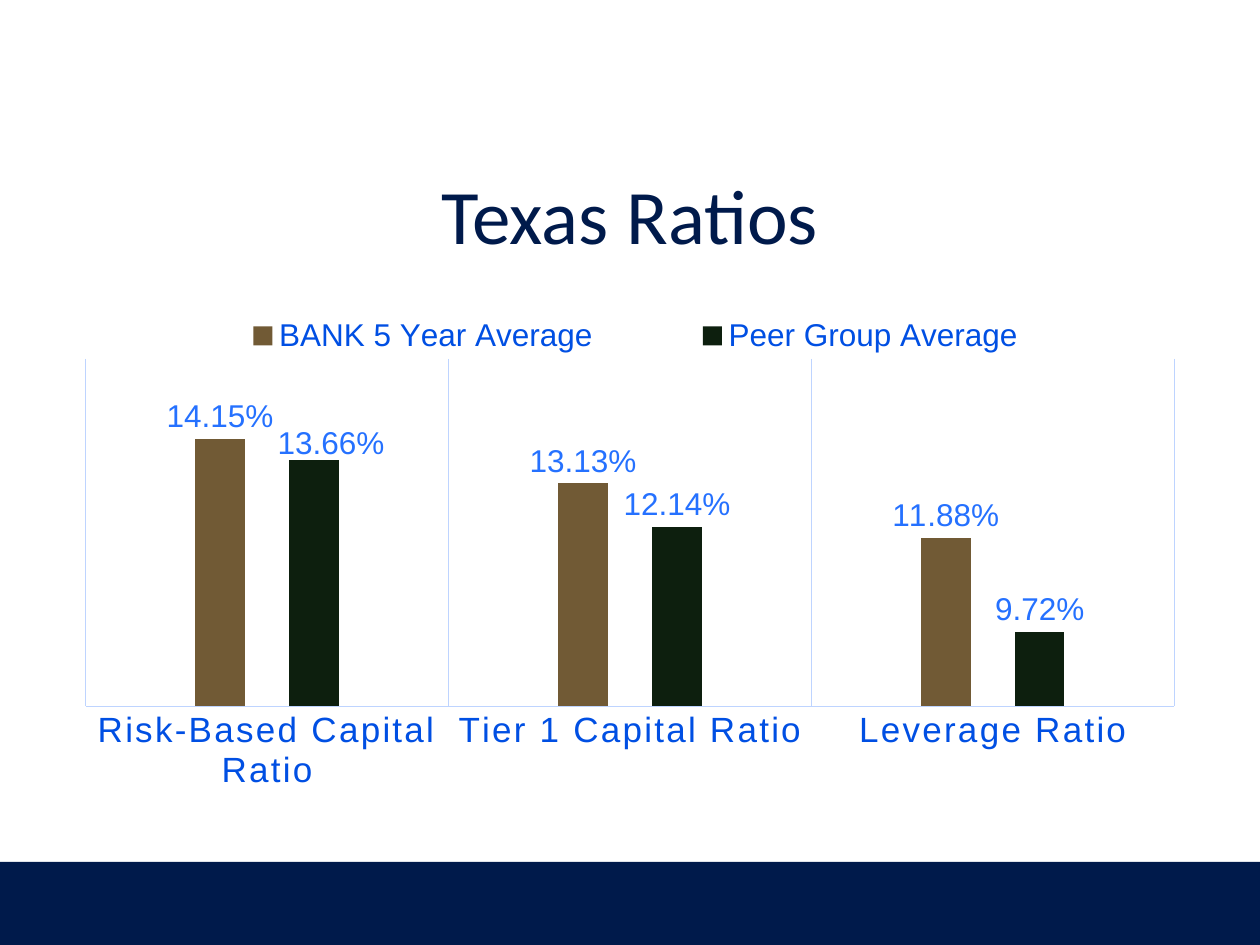
from lxml.etree import SubElement
from pptx import Presentation
from pptx.chart.data import CategoryChartData
from pptx.dml.color import RGBColor
from pptx.enum.chart import XL_CHART_TYPE, XL_LABEL_POSITION, XL_LEGEND_POSITION, XL_TICK_MARK
from pptx.enum.shapes import MSO_SHAPE
from pptx.enum.text import MSO_ANCHOR, PP_ALIGN
from pptx.oxml.ns import qn
from pptx.util import Inches, Pt

NAVY = RGBColor(0x00, 0x1A, 0x4B)
BLUE = RGBColor(0x00, 0x4F, 0xE3)
SKY = RGBColor(0x25, 0x71, 0xFF)
PALE = RGBColor(0xBE, 0xD4, 0xFF)
BROWN = RGBColor(0x71, 0x5A, 0x35)
GREEN = RGBColor(0x0D, 0x1F, 0x0E)


def style(font, name, size, color):
    font.name = name
    font.size = Pt(size)
    font.color.rgb = color


def place(parent, after, **parts):
    """Put a manual layout, given as fractions of the chart, after a child element."""
    for old in parent.findall(qn("c:layout")):
        parent.remove(old)
    layout = SubElement(parent, qn("c:layout"))
    manual = SubElement(layout, qn("c:manualLayout"))
    for tag, val in parts.items():
        SubElement(manual, qn("c:" + tag)).set("val", str(val))
    if after is None:
        parent.insert(0, layout)
    else:
        after.addnext(layout)


prs = Presentation()
prs.slide_width = Inches(10)
prs.slide_height = Inches(7.5)
slide = prs.slides.add_slide(prs.slide_layouts[6])

band = slide.shapes.add_shape(MSO_SHAPE.RECTANGLE, 0, Inches(6.84), Inches(10), Inches(0.66))
band.shadow.inherit = False
band.fill.solid()
band.fill.fore_color.rgb = NAVY
band.line.fill.background()

title = slide.shapes.add_textbox(Inches(0.5), Inches(1.07), Inches(9), Inches(1.25))
frame = title.text_frame
frame.word_wrap = True
frame.vertical_anchor = MSO_ANCHOR.MIDDLE
para = frame.paragraphs[0]
para.text = "Texas Ratios"
para.alignment = PP_ALIGN.CENTER
style(para.font, "Calibri", 44, NAVY)

data = CategoryChartData(number_format="0.00%")
data.categories = ["Risk-Based Capital Ratio", "Tier 1 Capital Ratio", "Leverage Ratio"]
data.add_series("BANK 5 Year Average", [0.1415, 0.1313, 0.1188])
data.add_series("Peer Group Average", [0.1366, 0.1214, 0.0972])
chart = slide.shapes.add_chart(
    XL_CHART_TYPE.COLUMN_CLUSTERED,
    Inches(0.5), Inches(2.32), Inches(9), Inches(4.06), data,
).chart
style(chart.font, "Calibri", 10, NAVY)
chart.has_title = False

chart.has_legend = True
legend = chart.legend
legend.position = XL_LEGEND_POSITION.TOP
legend.include_in_layout = False
style(legend.font, "Arial", 18, BLUE)
legend_pos = legend._element.find(qn("c:legendPos"))
place(legend._element, legend_pos, xMode="edge", yMode="edge", x=0.08, y=0.04, w=0.85, h=0.09)

axis = chart.category_axis
axis.major_tick_mark = XL_TICK_MARK.NONE
axis.minor_tick_mark = XL_TICK_MARK.NONE
axis.has_major_gridlines = True
style(axis.tick_labels.font, "Arial", 20, BLUE)
axis.tick_labels.font._element.set("spc", "120")
for line in (axis.format.line, axis.major_gridlines.format.line):
    line.color.rgb = PALE
    line.width = Pt(0.75)

scale = chart.value_axis
scale.minimum_scale = 0.08
scale.maximum_scale = 0.16
scale.major_unit = 0.02
scale.has_major_gridlines = False
scale.visible = False

plot = chart.plots[0]
plot.gap_width = 444
plot.overlap = -90
plot.vary_by_categories = False
for series, color in zip(plot.series, (BROWN, GREEN)):
    series.format.fill.solid()
    series.format.fill.fore_color.rgb = color
    series.invert_if_negative = False
    labels = series.data_labels
    labels.show_value = True
    labels.position = XL_LABEL_POSITION.OUTSIDE_END
    labels.number_format = "0.00%"
    labels.number_format_is_linked = False
    style(labels.font, "Arial", 18, SKY)

# Move the first peer label clear of its neighbour
label = plot.series[1].points[0].data_label
label.position = XL_LABEL_POSITION.OUTSIDE_END
style(label.font, "Arial", 18, SKY)
index = plot.series[1]._element.find(".//" + qn("c:dLbl") + "/" + qn("c:idx"))
place(index.getparent(), index, x=0.015, y=0.01)

area = chart._chartSpace.find(".//" + qn("c:plotArea"))
place(area, None, layoutTarget="inner", xMode="edge", yMode="edge",
      x=0.02, y=0.13, w=0.96, h=0.68)

prs.save("out.pptx")
